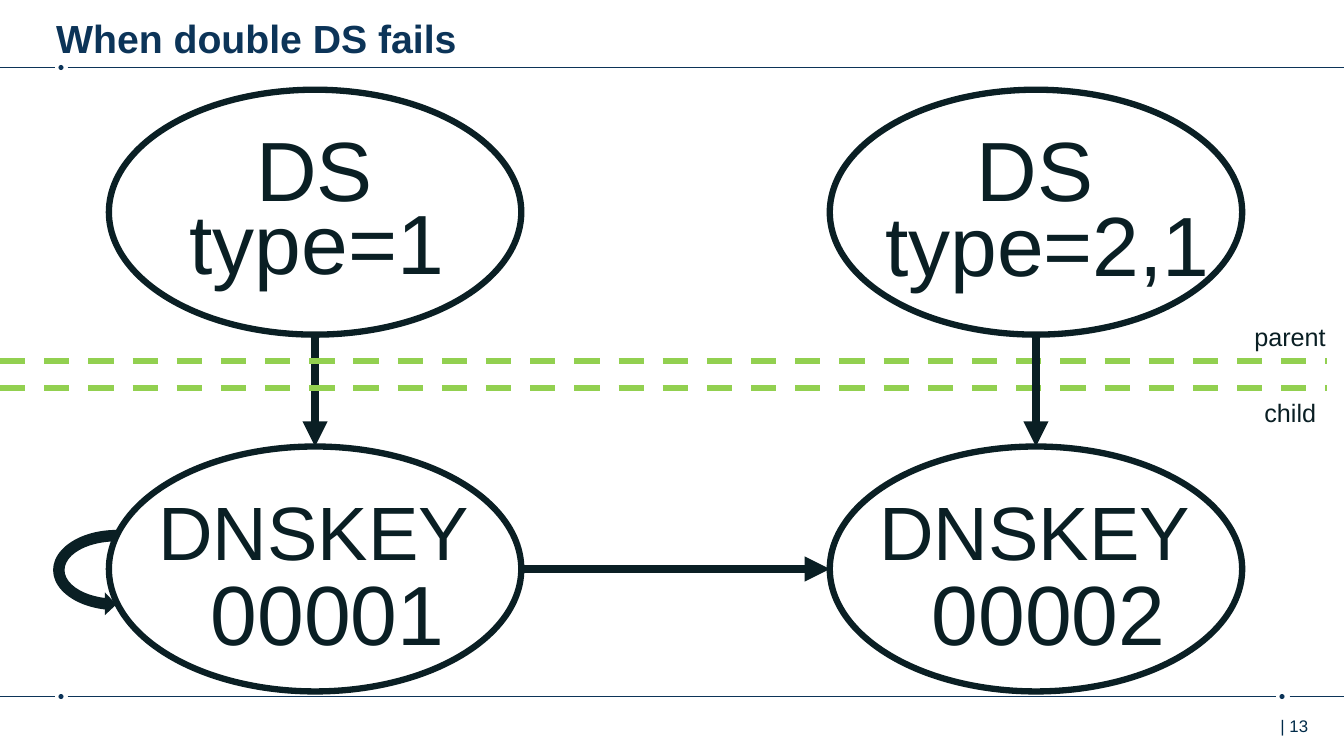
from dataclasses import dataclass

from lxml import etree
from pptx import Presentation
from pptx.dml.color import RGBColor
from pptx.enum.dml import MSO_LINE
from pptx.enum.shapes import MSO_CONNECTOR, MSO_SHAPE
from pptx.oxml.ns import qn
from pptx.shapes.autoshape import Shape
from pptx.shapes.connector import Connector
from pptx.slide import Slide
from pptx.util import Inches, Pt


@dataclass(frozen=True)
class Theme:
    font: str = "Arial"
    navy: RGBColor = RGBColor(0x0C, 0x34, 0x58)
    ink: RGBColor = RGBColor(0x0A, 0x1F, 0x24)
    footer: RGBColor = RGBColor(0x00, 0x2B, 0x49)
    boundary: RGBColor = RGBColor(0x92, 0xD0, 0x50)
    title_size: float = 28
    record_size: float = 60
    key_size: float = 54
    zone_size: float = 18
    footer_size: float = 12
    rule_width: float = 1
    outline_width: float = 4.5
    arrow_width: float = 6


@dataclass(frozen=True)
class Box:
    left: float
    top: float
    width: float
    height: float


@dataclass(frozen=True)
class Label:
    text: str
    box: Box
    size: float
    color: RGBColor
    bold: bool = False
    margin_left: float = 0
    margin_top: float = 0
    line_spacing: float = 1.08


@dataclass(frozen=True)
class Line:
    start: tuple[float, float]
    end: tuple[float, float]
    color: RGBColor
    width: float
    dashed: bool = False
    arrow: bool = False


THEME = Theme()
SLIDE_WIDTH, SLIDE_HEIGHT = 13.33, 7.5
NODE_WIDTH, NODE_HEIGHT = 4.09, 2.43
OLD_LEFT, NEW_LEFT = 1.08, 8.23
DS_TOP, KEY_TOP = 0.89, 4.43
DOT_SIZE = 0.05
HEADER_Y, FOOTER_Y = 0.67, 6.91


def add_label(slide: Slide, label: Label) -> None:
    box = label.box
    shape = slide.shapes.add_textbox(
        Inches(box.left), Inches(box.top), Inches(box.width), Inches(box.height))
    frame = shape.text_frame
    frame.word_wrap = False
    frame.margin_left = Inches(label.margin_left)
    frame.margin_top = Inches(label.margin_top)
    frame.margin_right = frame.margin_bottom = 0
    frame.text = label.text
    paragraph = frame.paragraphs[0]
    paragraph.line_spacing = label.line_spacing
    font = paragraph.runs[0].font
    font.name = THEME.font
    font.size = Pt(label.size)
    font.bold = label.bold
    font.color.rgb = label.color


def add_preset(slide: Slide, preset: MSO_SHAPE, box: Box) -> Shape:
    shape = slide.shapes.add_shape(
        preset, Inches(box.left), Inches(box.top), Inches(box.width), Inches(box.height))
    shape.shadow.inherit = False
    return shape


def add_solid(slide: Slide, preset: MSO_SHAPE, box: Box, color: RGBColor) -> Shape:
    shape = add_preset(slide, preset, box)
    shape.fill.solid()
    shape.fill.fore_color.rgb = color
    shape.line.fill.background()
    return shape


def add_node(slide: Slide, left: float, top: float) -> None:
    node = add_preset(slide, MSO_SHAPE.OVAL, Box(left, top, NODE_WIDTH, NODE_HEIGHT))
    node.fill.background()
    node.line.color.rgb = THEME.ink
    node.line.width = Pt(THEME.outline_width)


def add_line(slide: Slide, line: Line) -> Connector:
    connector = slide.shapes.add_connector(
        MSO_CONNECTOR.STRAIGHT, *(Inches(value) for value in line.start + line.end))
    connector.line.color.rgb = line.color
    connector.line.width = Pt(line.width)
    if line.dashed:
        connector.line.dash_style = MSO_LINE.DASH
    properties = connector._element.spPr
    if line.arrow:
        etree.SubElement(properties.find(qn("a:ln")), qn("a:tailEnd"), type="triangle")
    etree.SubElement(properties, qn("a:effectLst"))
    return connector


def add_rules(slide: Slide) -> None:
    """Draw the header and footer rules, broken by dots."""
    for y, segments, dots in (
        (HEADER_Y, ((0, 0.55), (0.67, SLIDE_WIDTH)), (0.58,)),
        (FOOTER_Y, ((0, 0.55), (0.67, 12.66), (12.79, SLIDE_WIDTH)), (0.58, 12.69)),
    ):
        for start, end in segments:
            add_line(slide, Line((start, y), (end, y), THEME.navy, THEME.rule_width))
        for left in dots:
            dot = Box(left, y - DOT_SIZE / 2, DOT_SIZE, DOT_SIZE)
            add_solid(slide, MSO_SHAPE.OVAL, dot, THEME.navy)


def add_self_signature(slide: Slide) -> None:
    """Draw the arrow that loops from the old key back to itself."""
    loop = add_solid(slide, MSO_SHAPE.CIRCULAR_ARROW, Box(0.7, 4.97, 0.91, 1.37), THEME.ink)
    loop.rotation = 90
    loop._element.spPr.find(qn("a:xfrm")).set("flipV", "1")


def arrow(start: tuple[float, float], end: tuple[float, float]) -> Line:
    return Line(start, end, THEME.ink, THEME.arrow_width, arrow=True)


def delegation_arrow(node_left: float) -> Line:
    center = node_left + NODE_WIDTH / 2
    return arrow((center, DS_TOP + NODE_HEIGHT), (center, KEY_TOP))


def boundary(y: float) -> Line:
    return Line((0, y), (13.16, y), THEME.boundary, THEME.outline_width, dashed=True)


def ink_label(text: str, box: Box, size: float) -> Label:
    return Label(text, box, size, THEME.ink)


def main() -> None:
    presentation = Presentation()
    presentation.slide_width = Inches(SLIDE_WIDTH)
    presentation.slide_height = Inches(SLIDE_HEIGHT)
    slide = presentation.slides.add_slide(presentation.slide_layouts[6])

    add_rules(slide)
    for left in (OLD_LEFT, NEW_LEFT):
        for top in (DS_TOP, KEY_TOP):
            add_node(slide, left, top)

    key_middle = KEY_TOP + NODE_HEIGHT / 2
    for line in (
        delegation_arrow(OLD_LEFT),
        arrow((OLD_LEFT + NODE_WIDTH, key_middle), (NEW_LEFT, key_middle)),
        boundary(3.58),
        boundary(3.85),
        delegation_arrow(NEW_LEFT),
    ):
        add_line(slide, line)
    add_self_signature(slide)

    labels = [
        Label("When double DS fails", Box(0.46, 0.05, 11.86, 0.49), THEME.title_size,
              THEME.navy, bold=True, margin_left=0.1, margin_top=0.09, line_spacing=1),
        Label("| 13", Box(12.56, 7.05, 0.77, 0.4), THEME.footer_size,
              THEME.footer, margin_left=0.14, margin_top=0.05, line_spacing=1),
        ink_label("type=1", Box(1.88, 1.81, 2.55, 1.01), THEME.record_size),
        ink_label("type=2,1", Box(8.78, 1.83, 3.25, 1.01), THEME.record_size),
        ink_label("parent", Box(12.44, 3.16, 0.72, 0.3), THEME.zone_size),
        ink_label("child", Box(12.54, 3.92, 0.52, 0.3), THEME.zone_size),
    ]
    for left, key_tag in ((OLD_LEFT, "00001"), (NEW_LEFT, "00002")):
        labels += [
            ink_label("DS", Box(left + 1.46, 1.09, 1.17, 1.01), THEME.record_size),
            ink_label("DNSKEY", Box(left + 0.49, 4.74, 3.11, 0.91), THEME.key_size),
            ink_label(key_tag, Box(left + 1.01, 5.49, 2.34, 1.01), THEME.record_size),
        ]
    for label in labels:
        add_label(slide, label)

    presentation.save("out.pptx")


if __name__ == "__main__":
    main()
